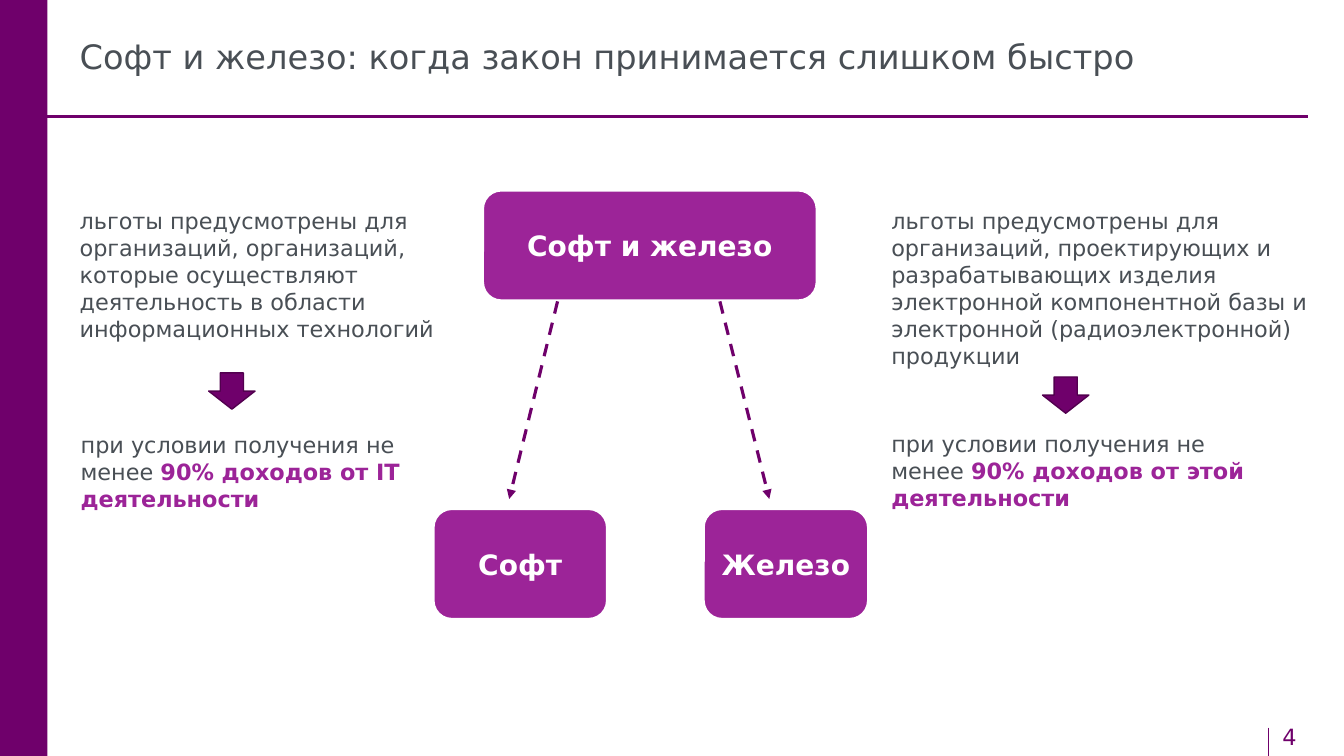
from pptx import Presentation
from pptx.dml.color import RGBColor
from pptx.enum.dml import MSO_LINE as Dash
from pptx.enum.shapes import MSO_CONNECTOR as Conn, MSO_SHAPE as Form
from pptx.enum.text import MSO_ANCHOR as Anchor, MSO_AUTO_SIZE as Fit, PP_ALIGN as Align
from pptx.oxml.ns import qn
from pptx.util import Inches, Pt
from lxml import etree

FONT = "DejaVu Sans"
DARK, PINK, EDGE, GREY, WHITE = "6F006B", "9C2498", "52004F", "494F55", "FFFFFF"


def paint(item, tone):
    """Give a font or a fill one plain colour."""
    if hasattr(item, "solid"):
        item.solid()
        item.fore_color.rgb = RGBColor.from_string(tone)
    else:
        item.color.rgb = RGBColor.from_string(tone)


def style(para, size, tone, bold=False):
    para.font.name, para.font.size, para.font.bold = FONT, Pt(size), bold
    paint(para.font, tone)


deck = Presentation()
deck.slide_width, deck.slide_height = Inches(13.33), Inches(7.5)
slide = deck.slides.add_slide(deck.slide_layouts[5])
shapes = slide.shapes

# Side bar
bar = shapes.add_shape(Form.RECTANGLE, Inches(-0.02), 0, Inches(0.49), Inches(7.5))
bar.shadow.inherit = False
paint(bar.fill, DARK)
bar.line.fill.background()

# Title
title = shapes.title
title.left, title.top = Inches(0.79), Inches(0.22)
title.width, title.height = Inches(10.61), Inches(0.73)
frame = title.text_frame
frame.text = "Софт и железо: когда закон принимается слишком быстро"
frame.auto_size, frame.vertical_anchor = Fit.NONE, Anchor.MIDDLE
frame.margin_left = frame.margin_right = frame.margin_top = frame.margin_bottom = 0
head = frame.paragraphs[0]
head.alignment, head.line_spacing = Align.LEFT, 0.9
style(head, 24, GREY)

# Page number
page = shapes.add_textbox(Inches(12.62), Inches(7.13), Inches(0.59), Inches(0.37))
page.text_frame.word_wrap = True
page.text_frame.text = "4"
style(page.text_frame.paragraphs[0], 16, DARK)

# Scheme boxes
for label, x, y, w in [
    ("Железо", 6.98, 5.05, 1.63),
    ("Софт", 4.3, 5.05, 1.72),
    ("Софт и железо", 4.79, 1.89, 3.31),
]:
    box = shapes.add_shape(Form.ROUNDED_RECTANGLE, Inches(x), Inches(y), Inches(w), Inches(1.09))
    box.shadow.inherit = False
    paint(box.fill, PINK)
    paint(box.line.fill, WHITE)
    box.line.width = Pt(1.5)
    box.text_frame.text = label
    box.text_frame.vertical_anchor = Anchor.MIDDLE
    para = box.text_frame.paragraphs[0]
    para.alignment = Align.CENTER
    style(para, 20, WHITE, True)

# Rules, then dashed arrows down to the lower boxes
for x1, y1, x2, y2, width, arrow in [
    (12.58, 7.22, 12.58, 7.5, 1, False),
    (0.23, 1.16, 12.97, 1.16, 2.25, False),
    (5.53, 2.99, 5.05, 4.95, 2.25, True),
    (7.14, 2.99, 7.63, 4.95, 2.25, True),
]:
    line = shapes.add_connector(Conn.STRAIGHT, Inches(x1), Inches(y1), Inches(x2), Inches(y2))
    paint(line.line.fill, DARK)
    line.line.width = Pt(width)
    if arrow:
        line.line.dash_style = Dash.DASH
        etree.SubElement(line.line._get_or_add_ln(), qn("a:tailEnd"), type="triangle")
    etree.SubElement(line._element.spPr, qn("a:effectLst"))

# Side notes: plain text and its bold ending
for x, y, w, h, plain, strong in [
    (8.84, 4.27, 3.67, 1.32, "при условии получения не менее ", "90% доходов от этой деятельности"),
    (8.84, 2.06, 4.14, 1.86, "льготы предусмотрены для организаций, проектирующих и разрабатывающих "
     "изделия электронной компонентной базы и электронной (радиоэлектронной) продукции", ""),
    (0.8, 4.28, 3.69, 1.32, "при условии получения не менее ", "90% доходов от IT деятельности"),
    (0.79, 2.06, 4.04, 1.86, "льготы предусмотрены для организаций, организаций, которые "
     "осуществляют деятельность в области информационных технологий", ""),
]:
    frame = shapes.add_textbox(Inches(x), Inches(y), Inches(w), Inches(h)).text_frame
    frame.word_wrap = True
    frame.margin_left = frame.margin_right = frame.margin_top = frame.margin_bottom = 0
    para = frame.paragraphs[0]
    para.add_run().text = plain
    style(para, 16, GREY)
    if strong:
        run = para.add_run()
        run.text = strong
        run.font.bold = True
        paint(run.font, PINK)

# Block arrows between the notes
for x, y in [(2.07, 3.7), (10.34, 3.74)]:
    arrow = shapes.add_shape(Form.DOWN_ARROW, Inches(x), Inches(y), Inches(0.46), Inches(0.36))
    arrow.shadow.inherit = False
    paint(arrow.fill, DARK)
    paint(arrow.line.fill, EDGE)
    arrow.line.width = Pt(1)

deck.save("out.pptx")
